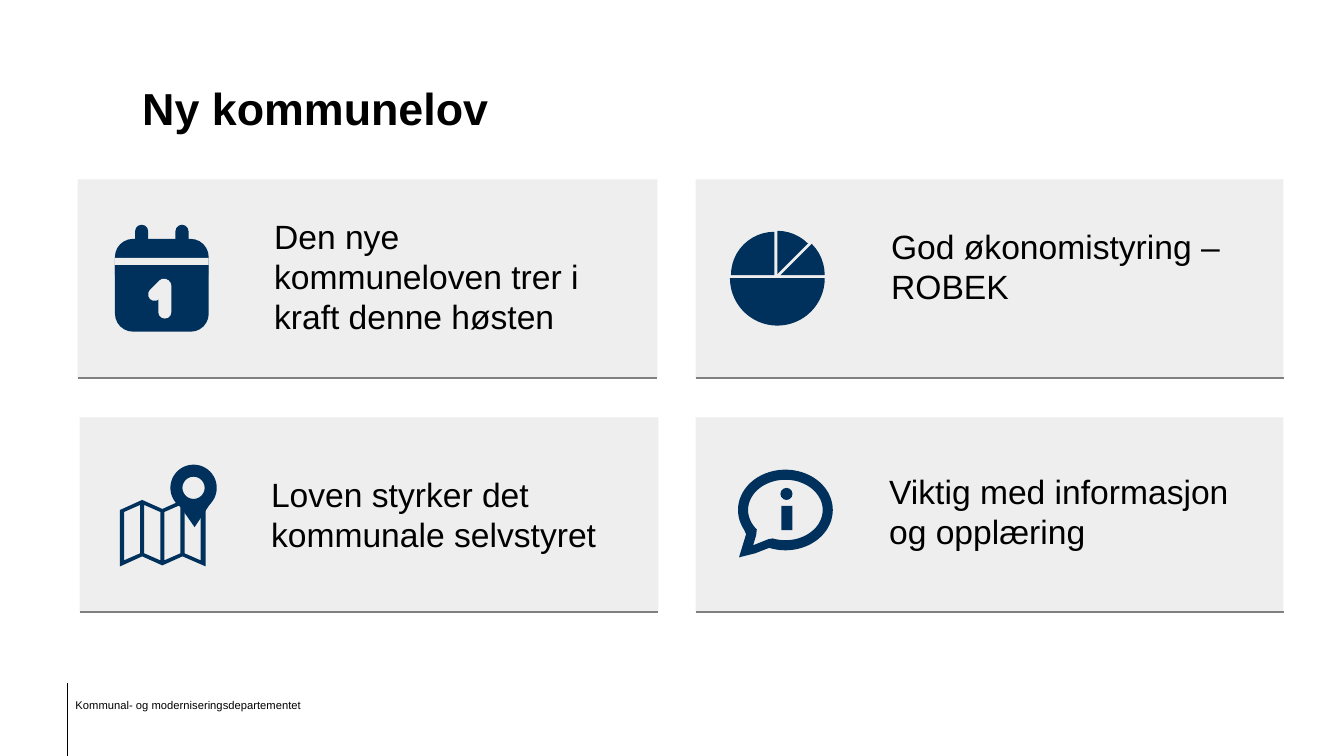
from math import cos, radians, sin

from lxml import etree
from pptx import Presentation
from pptx.dml.color import RGBColor
from pptx.enum.shapes import MSO_CONNECTOR, MSO_SHAPE
from pptx.enum.text import MSO_ANCHOR, MSO_AUTO_SIZE, PP_ALIGN
from pptx.oxml.ns import qn
from pptx.util import Inches, Pt

LINE = MSO_CONNECTOR.STRAIGHT
RECT, OVAL, ROUND = MSO_SHAPE.RECTANGLE, MSO_SHAPE.OVAL, MSO_SHAPE.ROUNDED_RECTANGLE
TAB, RING, PIE = MSO_SHAPE.ROUND_2_SAME_RECTANGLE, MSO_SHAPE.DONUT, MSO_SHAPE.PIE
NAVY, GREY, RULE, BLACK = "00315C", "EEEEEE", "808080", "000000"

deck = Presentation()
deck.slide_width, deck.slide_height = Inches(13.33), Inches(7.5)
slide = deck.slides.add_slide(deck.slide_layouts[5])
shapes = slide.shapes


def paint(shape, color):
    """Give a shape a plain fill without line or shadow."""
    shape.fill.solid()
    shape.fill.fore_color.rgb = RGBColor.from_string(color)
    shape.line.fill.background()
    shape.shadow.inherit = False


def outline(loops):
    """Draw closed loops of points, in inches, as one navy shape; inner loops are holes."""
    first, *holes = [[(Inches(x), Inches(y)) for x, y in loop] for loop in loops]
    pen = shapes.build_freeform(*first[0])
    pen.add_line_segments(first[1:], close=True)
    for hole in holes:
        pen.move_to(*hole[0])
        pen.add_line_segments(hole[1:], close=True)
    paint(pen.convert_to_shape(), NAVY)


# Cards and rules
lines = [(0.67, 6.78, 0.67, 7.5, BLACK, 0.75)]
for x, y, w, h in ((0.77, 1.78, 5.75, 1.97), (6.9, 1.78, 5.83, 1.97),
                   (0.79, 4.14, 5.74, 1.93), (6.9, 4.14, 5.83, 1.93)):
    paint(shapes.add_shape(RECT, *map(Inches, (x, y, w, h))), GREY)
    lines.append((x, y + h, x + w, y + h, RULE, 1))
for *ends, color, width in lines:
    rule = shapes.add_connector(LINE, *map(Inches, ends))
    rule.line.color.rgb = RGBColor.from_string(color)
    rule.line.width = Pt(width)
    etree.SubElement(rule._element.spPr, qn("a:effectLst"))

# Texts
texts = (
    (1.31, 0.32, 10.71, 1.06, "Ny kommunelov", 32),
    (2.62, 2.09, 3.74, 1.31, "Den nye kommuneloven trer i kraft denne høsten", 24),
    (8.74, 2.19, 3.64, 0.91, "God økonomistyring – ROBEK", 24),
    (2.59, 4.65, 3.54, 1.31, "Loven styrker det kommunale selvstyret", 24),
    (8.72, 4.62, 3.65, 1.31, "Viktig med informasjon og opplæring", 24),
    (0.65, 6.89, 2.83, 0.22, "Kommunal- og moderniseringsdepartementet", 8),
)
for x, y, w, h, text, size in texts:
    place = [Inches(v) for v in (x, y, w, h)]
    head = size == 32
    box = shapes.title if head else shapes.add_textbox(*place)
    box.left, box.top, box.width, box.height = place
    frame = box.text_frame
    frame.text = text
    frame.word_wrap = True
    frame.auto_size = MSO_AUTO_SIZE.NONE
    frame.vertical_anchor = MSO_ANCHOR.BOTTOM if head else MSO_ANCHOR.TOP
    para = frame.paragraphs[0]
    para.alignment = PP_ALIGN.LEFT
    if size == 8:
        para.line_spacing = 0.9
    style = {"name": "Arial", "size": Pt(size), "bold": head}
    for key, value in style.items():
        setattr(para.font, key, value)
    para.font.color.rgb = RGBColor.from_string(BLACK)

# Folded map with four panels, and the tip of its pin
folds = [(1.19, 5.06), (1.41, 4.96), (1.61, 5.05), (1.81, 4.96), (2.04, 5.06)]
sheet = [folds + [(x, y + 0.56) for x, y in reversed(folds)]]
for i in range(4):
    left = 1.23 + 0.2 * i
    right = left + 0.16
    a, b = (5.01, 5.08) if i % 2 else (5.08, 5.01)
    sheet.append([(left, a), (right, b), (right, b + 0.48), (left, a + 0.48)])
outline(sheet)
outline([[(1.72, 4.93), (1.82, 4.98), (1.93, 5), (2.04, 4.98), (2.13, 4.93), (1.93, 5.23)]])

# Speech bubble: an outer and an inner oval, each open at the tail
bubble = []
for rx, ry, end, tail in (
        (0.47, 0.4, -210, [(7.4, 5.3), (7.33, 5.53), (7.49, 5.49)]),
        (0.37, 0.3, -220, [(7.5, 5.31), (7.47, 5.41), (7.62, 5.35)])):
    turns = [radians(t) for t in range(110, end - 1, -5)]
    bubble.append([(7.79 + rx * cos(t), 5.06 + ry * sin(t)) for t in turns] + tail)
outline(bubble)

# Icon parts: kind, left, top, width, height, turn, adjustments, colour
parts = [
    (TAB, 1.14, 2.37, 0.93, 0.36, 0, [0.5], NAVY),
    (RECT, 1.14, 2.56, 0.93, 0.17, 0, [], GREY),
    (TAB, 1.14, 2.63, 0.93, 0.66, 180, [0.27], NAVY),
    (ROUND, 1.34, 2.23, 0.13, 0.26, 0, [0.5], NAVY),
    (ROUND, 1.74, 2.23, 0.13, 0.26, 0, [0.5], NAVY),
    (ROUND, 1.57, 2.77, 0.13, 0.39, 0, [0.5], GREY),
    (ROUND, 1.45, 2.81, 0.26, 0.13, -45, [0.5], GREY),
    (RING, 1.69, 4.61, 0.46, 0.46, 0, [0.26], NAVY),
    (RECT, 7.75, 5.02, 0.11, 0.24, 0, [], NAVY),
    (OVAL, 7.74, 4.84, 0.12, 0.12, 0, [], NAVY),
]
for x, y, r, start, end in ((7.68, 2.73, 0.43, 180, 270), (7.71, 2.72, 0.43, 270, 315),
                            (7.74, 2.73, 0.44, 315, 360), (7.71, 2.76, 0.47, 0, 180)):
    angles = [start * 0.6, end % 360 * 0.6]
    parts.append((PIE, x - r, y - r, 2 * r, 2 * r, 0, angles, NAVY))
for kind, x, y, w, h, turn, adjust, color in parts:
    part = shapes.add_shape(kind, *map(Inches, (x, y, w, h)))
    part.rotation = turn
    for i, value in enumerate(adjust):
        part.adjustments[i] = value
    paint(part, color)

deck.save("out.pptx")
